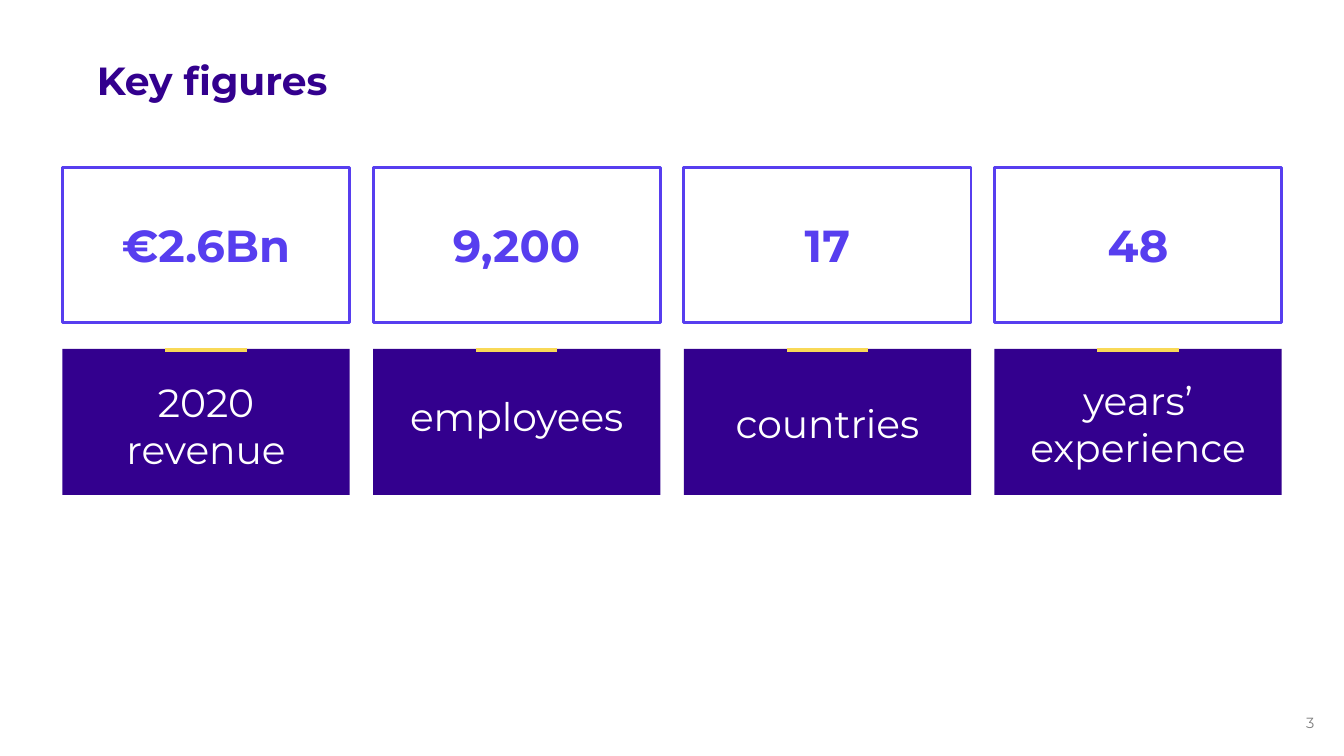
"""Build the key figures slide: four outlined values above four labelled panels."""
import pptx
import pptx.dml.color
import pptx.enum.shapes
import pptx.enum.text
import pptx.oxml
import pptx.oxml.ns
import pptx.util

Pt = pptx.util.Pt
ALIGN = pptx.enum.text.PP_ALIGN
ANCHOR = pptx.enum.text.MSO_ANCHOR

INDIGO, VIOLET, YELLOW = "33008E", "573EEF", "F9D957"
WHITE, GREY = "FFFFFF", "808080"


def colour(value):
    return pptx.dml.color.RGBColor.from_string(value)


def set_values(target, values):
    for name, value in values.items():
        setattr(target, name, value)


class SlideBuilder:
    font_name = "Montserrat"

    def __init__(self, slide):
        self.shapes = slide.shapes

    def fill_text(self, shape, lines, size, ink, bold=False, align=ALIGN.CENTER,
                  anchor=ANCHOR.MIDDLE, margin=0, wrap=True, spacing=1.0):
        frame = shape.text_frame
        set_values(frame, {
            "word_wrap": wrap, "vertical_anchor": anchor,
            "margin_left": Pt(margin), "margin_right": Pt(margin),
            "margin_top": Pt(margin), "margin_bottom": Pt(margin),
        })
        for index, line in enumerate(lines):
            para = frame.add_paragraph() if index else frame.paragraphs[0]
            set_values(para, {"alignment": align, "line_spacing": spacing})
            span = para.add_run()
            span.text = line
            set_values(span.font, {"name": self.font_name, "size": Pt(size), "bold": bold})
            span.font.color.rgb = colour(ink)

    def text_box(self, left, top, width, height, lines, size, ink, **style):
        box = self.shapes.add_textbox(Pt(left), Pt(top), Pt(width), Pt(height))
        self.fill_text(box, lines, size, ink, **style)

    def rectangle(self, left, top, width, height, fill=None, line=None):
        box = self.shapes.add_shape(
            pptx.enum.shapes.MSO_SHAPE.RECTANGLE,
            Pt(left), Pt(top), Pt(width), Pt(height))
        box.shadow.inherit = False
        if fill:
            box.fill.solid()
            box.fill.fore_color.rgb = colour(fill)
        else:
            box.fill.background()
        if line:
            box.line.color.rgb = colour(line)
            box.line.width = Pt(2)
        else:
            box.line.fill.background()
        return box

    def accent(self, left, top, width):
        line = self.shapes.add_connector(
            pptx.enum.shapes.MSO_CONNECTOR.STRAIGHT,
            Pt(left), Pt(top), Pt(left + width), Pt(top))
        line.line.color.rgb = colour(YELLOW)
        line.line.width = Pt(3)
        properties = line._element.spPr
        properties.append(pptx.oxml.parse_xml(
            f"<a:effectLst {pptx.oxml.ns.nsdecls('a')}/>"))


def main():
    deck = pptx.Presentation()
    set_values(deck, {"slide_width": Pt(960), "slide_height": Pt(540)})
    page = SlideBuilder(deck.slides.add_slide(deck.slide_layouts[6]))

    page.text_box(69.1, 43.9, 860, 44.6, ["Key figures"], 28, INDIGO, bold=True,
                  align=ALIGN.LEFT, anchor=ANCHOR.TOP, spacing=0.9)

    first_left, pitch, width = 44.6, 221.9, 205.2
    accent_width = 58
    figures = [
        ("€2.6Bn", ["2020", "revenue"], 270, 67.7),
        ("9,200", ["employees"], 280.1, 33.8),
        ("17", ["countries"], 285.1, 33.8),
        ("48", ["years’ experience"], 268.6, 67.7),
    ]
    for column, (value, label, label_top, label_height) in enumerate(figures):
        left = first_left + column * pitch
        value_box = page.rectangle(left, 119.5, width, 110.9, line=VIOLET)
        page.fill_text(value_box, [value], 32, VIOLET, bold=True)
        page.rectangle(left, 249.1, width, 104.4, fill=INDIGO)
        page.accent(left + (width - accent_width) / 2, 249.8, accent_width)
        page.text_box(left, label_top, width, label_height, label, 28, WHITE)

    page.text_box(915.8, 506.9, 25.9, 18.7, ["3"], 10.5, GREY,
                  align=ALIGN.RIGHT, margin=2.9, wrap=False)

    deck.save("out.pptx")


if __name__ == "__main__":
    main()
